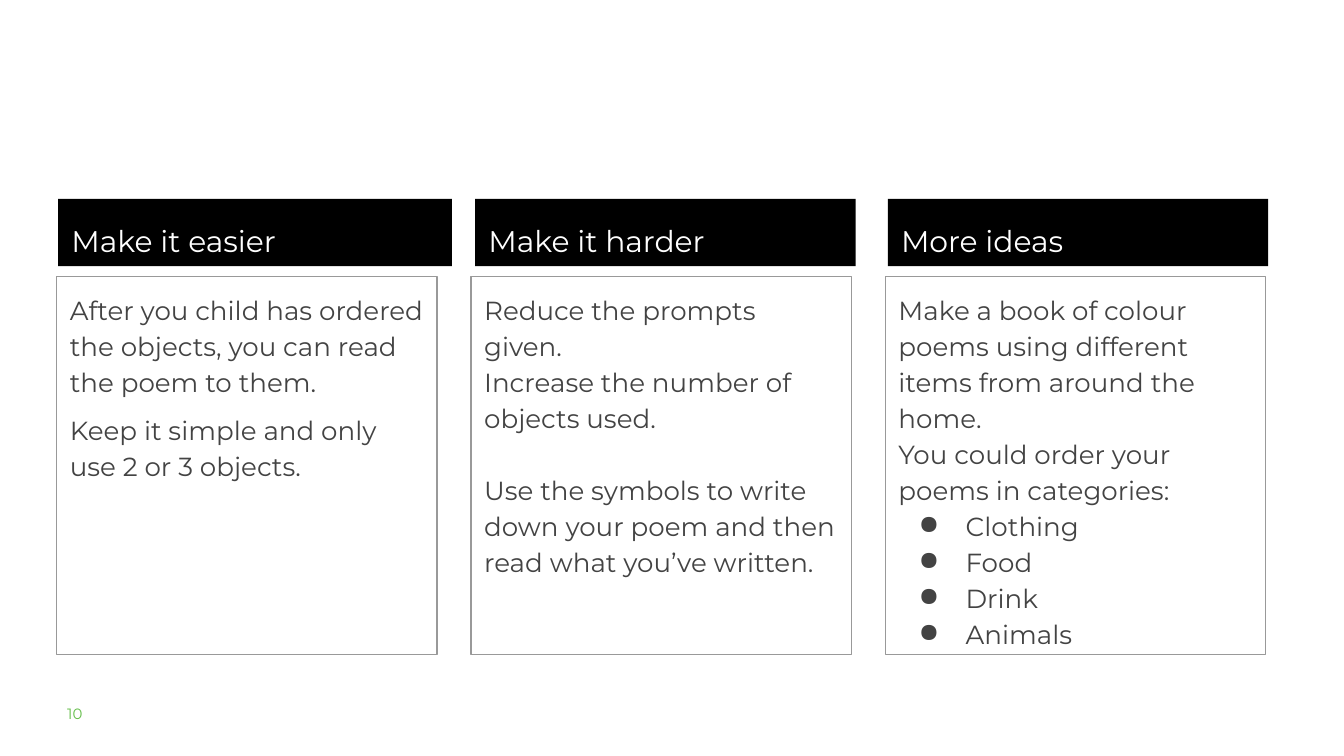
from lxml.etree import SubElement
from pptx import Presentation
from pptx.dml.color import RGBColor
from pptx.enum.text import MSO_ANCHOR as Anchor, MSO_AUTO_SIZE as AutoSize, PP_ALIGN as Align
from pptx.oxml.ns import qn
from pptx.util import Cm, Pt

COLORS = {"bar": "000000", "bar_text": "FFFFFF", "frame": "999999",
          "text": "434343", "number": "65BE4B"}
FONT = "Montserrat"
INSET = 0.25
BODY_LEFT, BODY_STEP, COLUMN_WIDTH = 1.07, 7.83, 7.19

# Each column: heading, heading left, heading width, paragraphs as
# (text, space before in points, bulleted)
COLUMNS = [
    ("Make it easier", 1.1, 7.44, [
        ("After you child has ordered the objects, you can read the poem to them.", 0, False),
        ("Keep it simple and only use 2 or 3 objects.", 6, False)]),
    ("Make it harder", 8.98, COLUMN_WIDTH, [
        ("Reduce the prompts given.", 0, False),
        ("Increase the number of objects used.", 0, False),
        ("Use the symbols to write down your poem and then read what you’ve written.",
         19.3, False)]),
    ("More ideas", 16.78, COLUMN_WIDTH, [
        ("Make a book of colour poems using different items from around the home.", 0, False),
        ("You could order your poems in categories:", 0, False),
        *[(item, 0, True) for item in ("Clothing", "Food", "Drink", "Animals")]]),
]


def color(name):
    return RGBColor.from_string(COLORS[name])


class SlideBuilder:
    def __init__(self, page):
        self.page = page
        # The comparison layout pairs a heading with a body, twice
        self.spare = [box for box in page.placeholders if box.placeholder_format.idx > 0]
        title = page.shapes.title.element
        title.getparent().remove(title)

    def frame(self, left, top, width, height, inset=INSET, use_placeholder=True):
        area = Cm(left), Cm(top), Cm(width), Cm(height)
        if use_placeholder and self.spare:
            box = self.spare.pop(0)
            box.left, box.top, box.width, box.height = area
        else:
            box = self.page.shapes.add_textbox(*area)
        text = box.text_frame
        text.word_wrap = True
        text.auto_size = AutoSize.NONE
        text.vertical_anchor = Anchor.TOP
        text.margin_left = text.margin_right = Cm(inset)
        text.margin_top = text.margin_bottom = Cm(inset)
        return box

    def paragraph(self, box, index, text, size, shade, spacing=1.0, before=0, bullet=False):
        frame = box.text_frame
        para = frame.add_paragraph() if index else frame.paragraphs[0]
        props = para._p.get_or_add_pPr()
        props.set("marL", str(Cm(1.27) if bullet else 0))
        props.set("indent", str(Cm(-0.89) if bullet else 0))
        if bullet:
            SubElement(props, qn("a:buChar")).set("char", "●")
        else:
            SubElement(props, qn("a:buNone"))
        para.alignment = Align.LEFT
        para.line_spacing = spacing
        para.space_before = Pt(before)
        para.space_after = Pt(0)
        span = para.add_run()
        span.text = text
        span.font.name = FONT
        span.font.size = Pt(size)
        span.font.bold = False
        span.font.color.rgb = color(shade)

    def heading(self, text, left, width):
        box = self.frame(left, 3.76, width, 1.27)
        box.fill.solid()
        box.fill.fore_color.rgb = color("bar")
        self.paragraph(box, 0, text, 16, "bar_text", spacing=1.3)

    def body(self, paragraphs, left):
        box = self.frame(left, 5.23, COLUMN_WIDTH, 7.14)
        box.line.color.rgb = color("frame")
        box.line.width = Pt(0.75)
        for index, (text, before, bullet) in enumerate(paragraphs):
            self.paragraph(box, index, text, 14, "text", 1.15, before, bullet)

    def number(self, text):
        box = self.frame(1.27, 13.31, 2, 0.5, inset=0, use_placeholder=False)
        self.paragraph(box, 0, text, 8, "number")


def main():
    deck = Presentation()
    deck.slide_width, deck.slide_height = Cm(25.4), Cm(14.29)
    builder = SlideBuilder(deck.slides.add_slide(deck.slide_layouts[4]))

    # Three columns of heading and text
    for column, (heading, left, width, paragraphs) in enumerate(COLUMNS):
        builder.heading(heading, left, width)
        builder.body(paragraphs, BODY_LEFT + column * BODY_STEP)

    # Slide number
    builder.number("10")
    deck.save("out.pptx")


if __name__ == "__main__":
    main()
